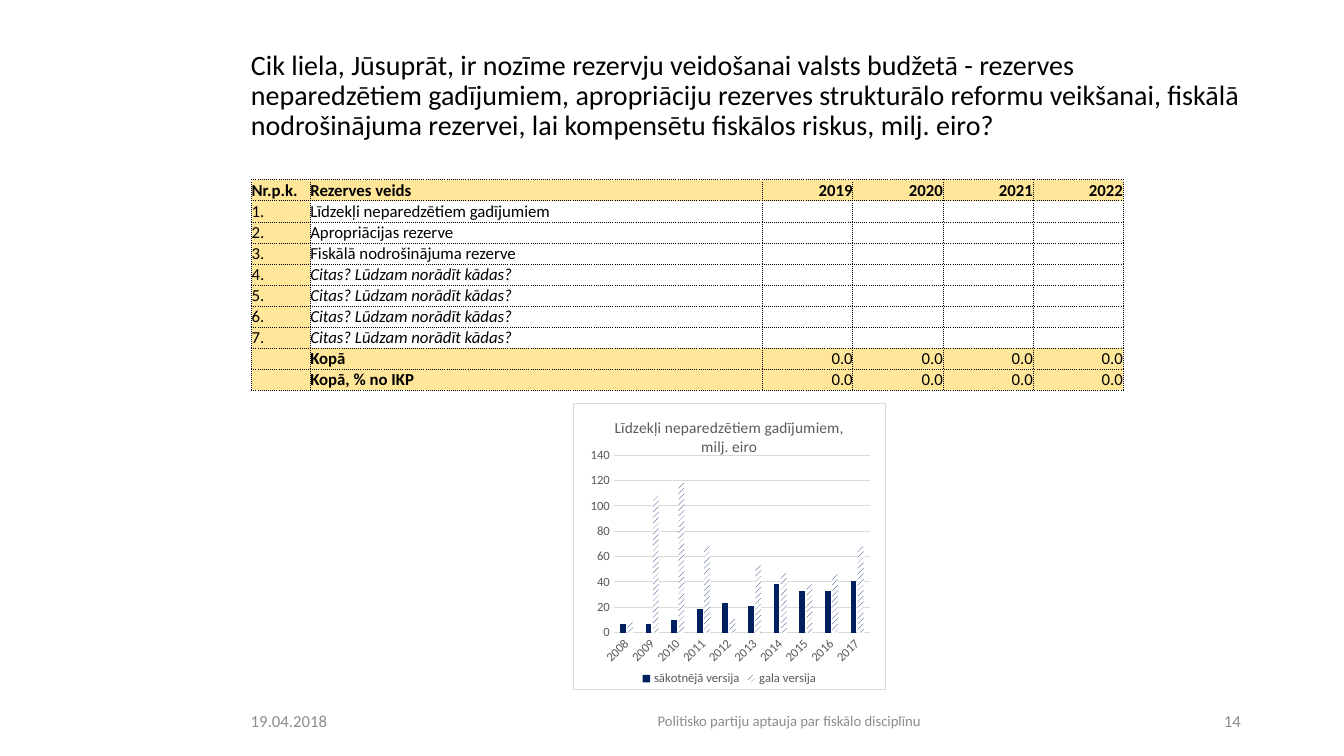
import pptx
import pptx.chart.data
import pptx.dml.color
import pptx.enum.chart
import pptx.enum.dml
import pptx.enum.text
import pptx.oxml
import pptx.oxml.ns
import pptx.util

Cm = pptx.util.Cm
Pt = pptx.util.Pt
RGB = pptx.dml.color.RGBColor.from_string
ALIGN = pptx.enum.text.PP_ALIGN
ANCHOR = pptx.enum.text.MSO_ANCHOR


class Theme:
    font = "Calibri"
    black = RGB("000000")
    white = RGB("FFFFFF")
    sand = RGB("FFE699")
    navy = RGB("002060")
    chart_gray = RGB("595959")
    rule_gray = RGB("D9D9D9")
    footer_gray = RGB("8C8C8C")
    title_size = Pt(20)
    body_size = Pt(12)
    footer_size = Pt(10.5)
    chart_title_size = Pt(11)
    chart_size = Pt(9)
    rule_width = Pt(0.75)


def set_font(font, size, color, bold=False, italic=False):
    font.name = Theme.font
    font.size = size
    font.color.rgb = color
    font.bold = bold
    font.italic = italic


def parse_xml(tag, body, attributes=""):
    namespaces = pptx.oxml.ns.nsdecls("a", "c")
    return pptx.oxml.parse_xml(f"<{tag} {namespaces} {attributes}>{body}</{tag}>")


deck = pptx.Presentation()
deck.slide_width = Cm(33.87)
deck.slide_height = Cm(19.05)
slide = deck.slides.add_slide(deck.slide_layouts[5])

question = slide.shapes.title
question.left, question.top, question.width, question.height = Cm(6.07), Cm(1.02), Cm(25.45), Cm(2.82)
question.text_frame.text = (
    "Cik liela, Jūsuprāt, ir nozīme rezervju veidošanai valsts budžetā - rezerves "
    "neparedzētiem gadījumiem, apropriāciju rezerves strukturālo reformu veikšanai, "
    "fiskālā nodrošinājuma rezervei, lai kompensētu fiskālos riskus, milj. eiro?"
)
question.text_frame.auto_size = pptx.enum.text.MSO_AUTO_SIZE.NONE
question.text_frame.vertical_anchor = ANCHOR.MIDDLE
question.text_frame.paragraphs[0].alignment = ALIGN.LEFT
question.text_frame.paragraphs[0].line_spacing = 0.9
set_font(question.text_frame.paragraphs[0].font, Theme.title_size, Theme.black)

other = "Citas? Lūdzam norādīt kādas?"
reserve_kinds = [
    "Līdzekļi neparedzētiem gadījumiem",
    "Apropriācijas rezerve",
    "Fiskālā nodrošinājuma rezerve",
] + [other] * 4
reserve_rows = [["Nr.p.k.", "Rezerves veids", "2019", "2020", "2021", "2022"]]
reserve_rows += [[f"{number}.", kind] + [""] * 4 for number, kind in enumerate(reserve_kinds, 1)]
reserve_rows += [["", total] + ["0.0"] * 4 for total in ("Kopā", "Kopā, % no IKP")]
first_total = len(reserve_kinds) + 1

column_widths = [1.48, 11.4] + [2.27] * 4
row_height = 0.53
reserves = slide.shapes.add_table(
    len(reserve_rows), len(column_widths), Cm(6.34), Cm(4.53),
    Cm(sum(column_widths)), Cm(row_height * len(reserve_rows)),
).table
reserves.first_row = False
reserves.horz_banding = False
for column, width in zip(reserves.columns, column_widths):
    column.width = Cm(width)

for row_index, texts in enumerate(reserve_rows):
    reserves.rows[row_index].height = Cm(row_height)
    is_header = row_index == 0
    is_total = row_index >= first_total
    for column_index, text in enumerate(texts):
        cell = reserves.cell(row_index, column_index)
        cell.text = text
        cell.margin_left = cell.margin_right = cell.margin_top = cell.margin_bottom = 0
        cell.vertical_anchor = ANCHOR.BOTTOM if is_header else ANCHOR.MIDDLE
        entry = cell.text_frame.paragraphs[0]
        entry.alignment = ALIGN.RIGHT if column_index > 1 else ALIGN.LEFT
        set_font(
            entry.font, Theme.body_size, Theme.black,
            bold=is_header or (is_total and column_index == 1),
            italic=text == other,
        )
        cell_properties = cell._tc.get_or_add_tcPr()
        for side in ("L", "R", "T", "B"):
            cell_properties.append(parse_xml(
                f"a:ln{side}",
                f'<a:solidFill><a:srgbClr val="{Theme.black}"/></a:solidFill><a:prstDash val="dot"/>',
                f'w="{Pt(0.5)}"',
            ))
        if is_header or is_total or column_index == 0:
            cell.fill.solid()
            cell.fill.fore_color.rgb = Theme.sand
        else:
            cell.fill.background()

contingency = pptx.chart.data.CategoryChartData(number_format="#,##0")
contingency.categories = [str(year) for year in range(2008, 2018)]
contingency.add_series("sākotnējā versija", [7, 7, 10, 19, 23, 21, 38, 33, 33, 41])
contingency.add_series("gala versija", [8, 108, 118, 68, 11, 53, 47, 38, 46, 68])
chart = slide.shapes.add_chart(
    pptx.enum.chart.XL_CHART_TYPE.COLUMN_CLUSTERED,
    Cm(14.43), Cm(10.16), Cm(7.9), Cm(7.24), contingency,
).chart
set_font(chart.font, Theme.chart_size, Theme.chart_gray)
chart.has_title = True
chart.chart_title.include_in_layout = False
chart.chart_title.text_frame.text = "Līdzekļi neparedzētiem gadījumiem, milj. eiro"
set_font(chart.chart_title.text_frame.paragraphs[0].font, Theme.chart_title_size, Theme.chart_gray)
chart.has_legend = True
chart.legend.position = pptx.enum.chart.XL_LEGEND_POSITION.BOTTOM
chart.legend.include_in_layout = False
set_font(chart.legend.font, Theme.chart_size, Theme.chart_gray)

years, millions = chart.category_axis, chart.value_axis
for axis in (years, millions):
    axis.major_tick_mark = axis.minor_tick_mark = pptx.enum.chart.XL_TICK_MARK.NONE
    set_font(axis.tick_labels.font, Theme.chart_size, Theme.chart_gray)
millions.minimum_scale = 0
millions.maximum_scale = 140
millions.major_unit = 20
millions.tick_labels.number_format = "#,##0"
millions.tick_labels.number_format_is_linked = False
millions.format.line.fill.background()
millions.has_major_gridlines = True
for line in (years.format.line, millions.major_gridlines.format.line):
    line.color.rgb = Theme.rule_gray
    line.width = Theme.rule_width
years_text = years._element.find(pptx.oxml.ns.qn("c:txPr"))
years_text.find(pptx.oxml.ns.qn("a:bodyPr")).set("rot", "-2700000")

columns = chart.plots[0]
columns.vary_by_categories = False
columns.gap_width = 219
columns.overlap = -27
initial_version, final_version = columns.series
initial_version.format.fill.solid()
initial_version.format.fill.fore_color.rgb = Theme.navy
final_version.format.fill.patterned()
final_version.format.fill.pattern = pptx.enum.dml.MSO_PATTERN.WIDE_UPWARD_DIAGONAL
final_version.format.fill.fore_color.rgb = Theme.navy
final_version.format.fill.back_color.rgb = Theme.white

chart_root = chart._chartSpace.find(pptx.oxml.ns.qn("c:chart"))
chart_root.addnext(parse_xml(
    "c:spPr",
    f'<a:solidFill><a:srgbClr val="{Theme.white}"/></a:solidFill><a:ln w="{Theme.rule_width}">'
    f'<a:solidFill><a:srgbClr val="{Theme.rule_gray}"/></a:solidFill></a:ln>',
))
plot_area = chart_root.find(pptx.oxml.ns.qn("c:plotArea"))
for layout in plot_area.findall(pptx.oxml.ns.qn("c:layout")):
    plot_area.remove(layout)
plot_layout = (
    ("layoutTarget", "inner"), ("xMode", "edge"), ("yMode", "edge"),
    ("x", 0.13), ("y", 0.18), ("w", 0.82), ("h", 0.62),
)
plot_area.insert(0, parse_xml(
    "c:layout",
    "<c:manualLayout>"
    + "".join(f'<c:{key} val="{value}"/>' for key, value in plot_layout)
    + "</c:manualLayout>",
))

footer_items = [
    ("19.04.2018", 6.07, 4.17, ALIGN.LEFT, Theme.body_size),
    ("Politisko partiju aptauja par fiskālo disciplīnu", 10.95, 17.88, ALIGN.CENTER, Theme.footer_size),
    ("14", 29.51, 2.01, ALIGN.RIGHT, Theme.body_size),
]
for text, left, width, alignment, size in footer_items:
    footer = slide.shapes.add_textbox(Cm(left), Cm(17.65), Cm(width), Cm(1.02)).text_frame
    footer.word_wrap = True
    footer.vertical_anchor = ANCHOR.MIDDLE
    footer.text = text
    footer.paragraphs[0].alignment = alignment
    set_font(footer.paragraphs[0].font, size, Theme.footer_gray)

deck.save("out.pptx")
